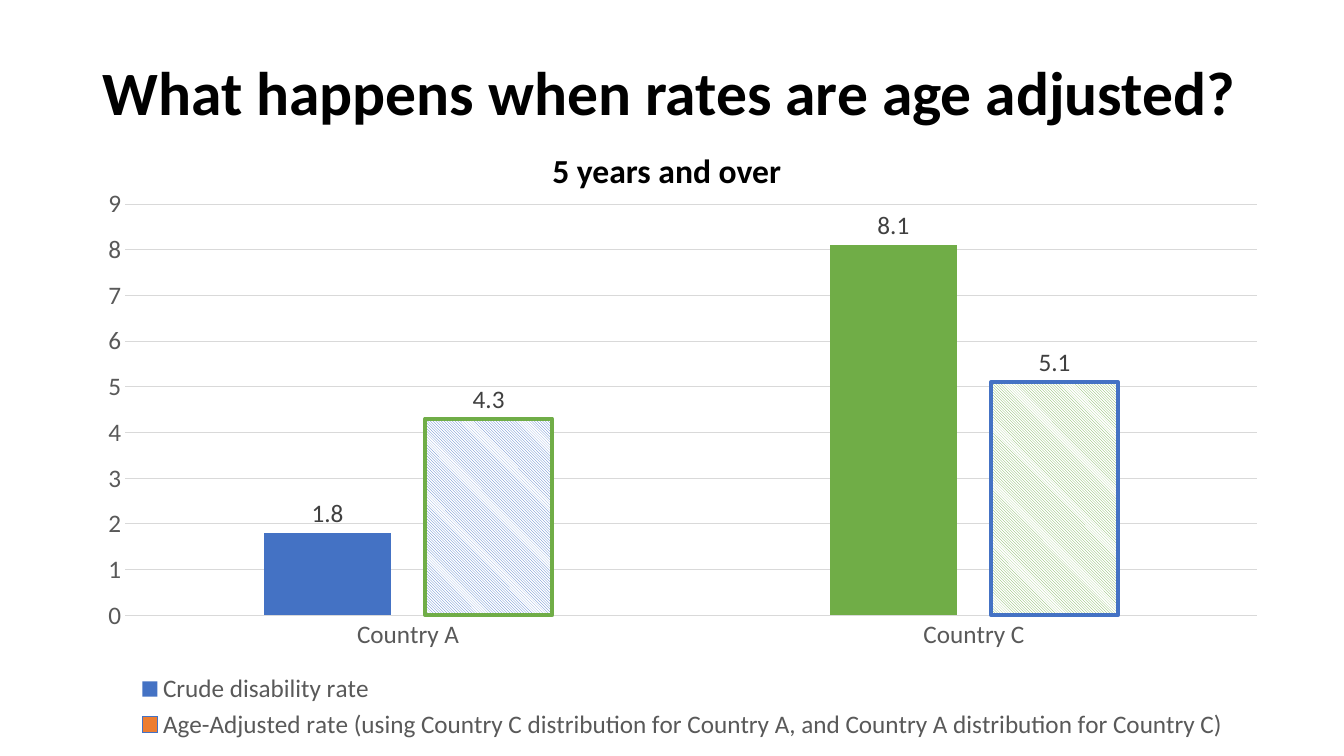
"""Build a slide comparing crude and age-adjusted disability rates."""
import lxml.etree
import pptx
import pptx.chart.data
import pptx.dml.color
import pptx.enum.chart
import pptx.enum.dml
import pptx.enum.text
import pptx.oxml
import pptx.oxml.ns
import pptx.util
from pptx.util import Cm

BLUE, GREEN, ORANGE = "4472C4", "70AD47", "ED7D31"
GRAY, LIGHT_GRAY, DARK_GRAY = "595959", "D9D9D9", "404040"
BLACK, WHITE = "000000", "FFFFFF"


def paint(color_format, value):
    """Set a color format from a hex string."""
    color_format.rgb = pptx.dml.color.RGBColor.from_string(value)


def style_font(font, size, color, bold=False):
    """Set typeface, size, color and weight."""
    font.name = "Calibri"
    font.size = pptx.util.Pt(size)
    font.bold = bold
    paint(font.color, color)


presentation = pptx.Presentation()
presentation.slide_width = Cm(33.87)
presentation.slide_height = Cm(19.05)
slide = presentation.slides.add_slide(presentation.slide_layouts[5])

title = slide.shapes.title
title.left, title.top, title.width, title.height = Cm(1.02), Cm(0.56), Cm(31.72), Cm(3.68)
title.text_frame.auto_size = pptx.enum.text.MSO_AUTO_SIZE.NONE
title.text_frame.vertical_anchor = pptx.enum.text.MSO_ANCHOR.MIDDLE
paragraph = title.text_frame.paragraphs[0]
paragraph.alignment = pptx.enum.text.PP_ALIGN.CENTER
paragraph.line_spacing = 0.9
run = paragraph.add_run()
run.text = "What happens when rates are age adjusted?"
style_font(run.font, 44, BLACK, bold=True)

subtitle = slide.shapes.add_textbox(Cm(13.67), Cm(3.66), Cm(6.43), Cm(2.31))
subtitle.text_frame.word_wrap = True
run = subtitle.text_frame.paragraphs[0].add_run()
run.text = "5 years and over"
style_font(run.font, 24, BLACK, bold=True)

rates = pptx.chart.data.CategoryChartData(number_format="0.0")
rates.categories = ["Country A", "Country C"]
rates.add_series("Crude disability rate", [1.8, 8.1])
rates.add_series(
    "Age-Adjusted rate (using Country C distribution for Country A, "
    "and Country A distribution for Country C)",
    [4.3, 5.1],
)
chart = slide.shapes.add_chart(
    pptx.enum.chart.XL_CHART_TYPE.COLUMN_CLUSTERED,
    Cm(2.13), Cm(4.5), Cm(30.15), Cm(14.27), rates,
).chart
chart.has_title = False
style_font(chart.font, 18, BLACK)
chart.has_legend = True
chart.legend.position = pptx.enum.chart.XL_LEGEND_POSITION.BOTTOM
chart.legend.include_in_layout = False
style_font(chart.legend.font, 18, GRAY)

for axis in (chart.category_axis, chart.value_axis):
    axis.major_tick_mark = pptx.enum.chart.XL_TICK_MARK.NONE
    axis.minor_tick_mark = pptx.enum.chart.XL_TICK_MARK.NONE
    style_font(axis.tick_labels.font, 18, GRAY)
chart.value_axis.minimum_scale = 0
chart.value_axis.maximum_scale = 9
chart.value_axis.major_unit = 1
chart.value_axis.tick_labels.number_format = "General"
chart.value_axis.tick_labels.number_format_is_linked = False
chart.value_axis.format.line.fill.background()
for line in (chart.category_axis.format.line, chart.value_axis.major_gridlines.format.line):
    paint(line.color, LIGHT_GRAY)
    line.width = pptx.util.Pt(0.75)

plot = chart.plots[0]
plot.gap_width = 219
plot.overlap = -27
plot.vary_by_categories = False
crude, adjusted = plot.series
for series, color in ((crude, BLUE), (adjusted, ORANGE)):
    series.format.fill.solid()
    paint(series.format.fill.fore_color, color)
    labels = series.data_labels
    labels.show_value = True
    labels.position = pptx.enum.chart.XL_LABEL_POSITION.OUTSIDE_END
    labels.number_format = "0.0"
    labels.number_format_is_linked = False
    style_font(labels.font, 18, DARK_GRAY)

paint(adjusted.format.line.color, BLUE)
adjusted.format.line.width = pptx.util.Pt(3)
country_c_fill = crude.points[1].format.fill
country_c_fill.solid()
paint(country_c_fill.fore_color, GREEN)

for index, (stripe, outline) in enumerate([(BLUE, GREEN), (GREEN, BLUE)]):
    column = adjusted.points[index].format
    column.fill.patterned()
    column.fill.pattern = pptx.enum.dml.MSO_PATTERN.DARK_DOWNWARD_DIAGONAL
    paint(column.fill.fore_color, stripe)
    paint(column.fill.back_color, WHITE)
    paint(column.line.color, outline)
    column.line.width = pptx.util.Pt(3)

plot_area = chart.element.find(".//" + pptx.oxml.ns.qn("c:plotArea"))
layout = plot_area.find(pptx.oxml.ns.qn("c:layout"))
if layout is None:
    layout = lxml.etree.Element(pptx.oxml.ns.qn("c:layout"))
    plot_area.insert(0, layout)
manual = lxml.etree.SubElement(layout, pptx.oxml.ns.qn("c:manualLayout"))
for tag, value in (
    ("layoutTarget", "inner"), ("xMode", "edge"), ("yMode", "edge"),
    ("x", "0.034"), ("y", "0.045"), ("w", "0.946"), ("h", "0.726"),
):
    lxml.etree.SubElement(manual, pptx.oxml.ns.qn("c:" + tag)).set("val", value)

presentation.save("out.pptx")
